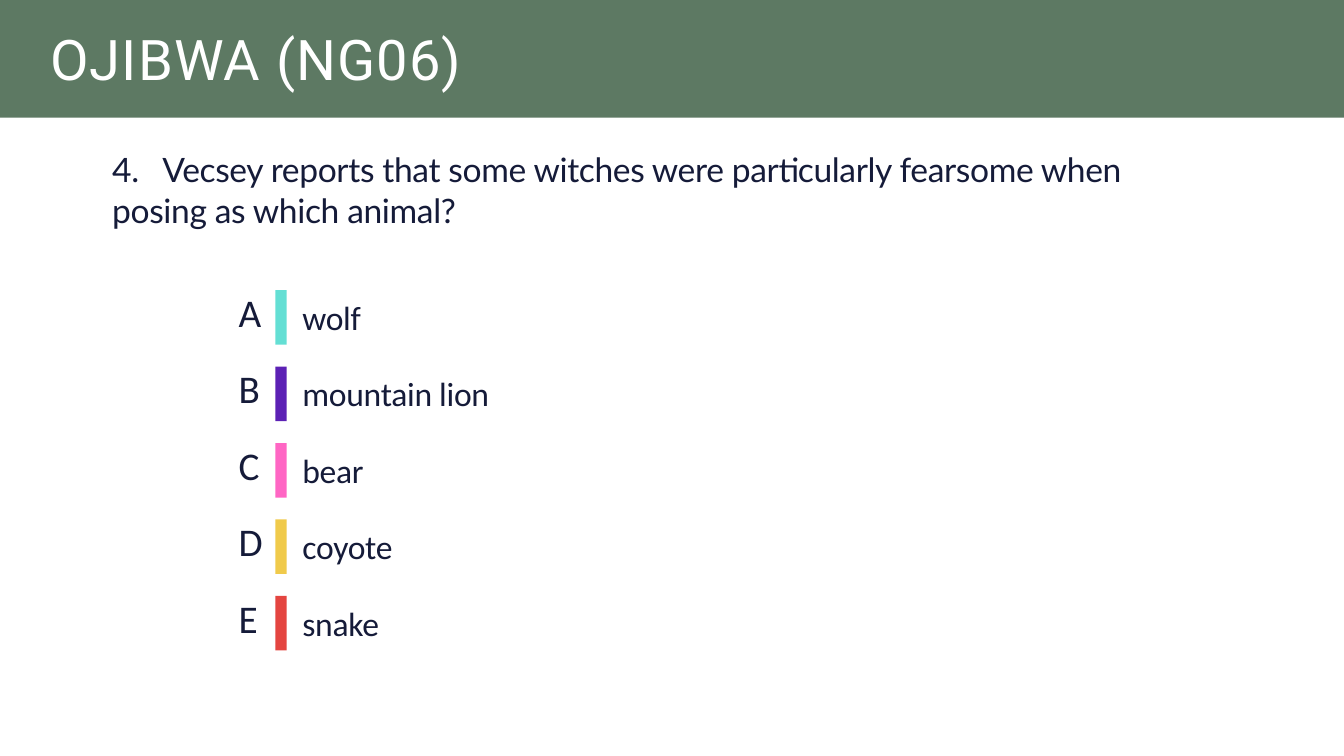
import pptx
import pptx.dml.color
import pptx.enum.shapes
import pptx.enum.text
import pptx.oxml
import pptx.oxml.ns
from pptx.util import Cm

RGBColor = pptx.dml.color.RGBColor
WHITE = RGBColor(0xFF, 0xFF, 0xFF)
GREEN = RGBColor(0x5D, 0x79, 0x63)
NAVY = RGBColor(0x15, 0x1B, 0x39)
TEAL = RGBColor(0x64, 0xDF, 0xD4)
PURPLE = RGBColor(0x5C, 0x21, 0xB5)
PINK = RGBColor(0xFF, 0x66, 0xC4)
YELLOW = RGBColor(0xF0, 0xCA, 0x4B)
RED = RGBColor(0xE4, 0x45, 0x40)

ANSWERS = [
    ("A", "wolf", TEAL, 25.25),
    ("B", "mountain lion", PURPLE, 30.07),
    ("C", "bear", PINK, 27),
    ("D", "coyote", YELLOW, 25.25),
    ("E", "snake", RED, 25.25),
]
FIRST_ROW = 10.97
ROW_PITCH = 2.89


def add_text(shapes, text, box, font, size, color, tracking):
    sp = shapes.add_textbox(*map(Cm, box))
    tf = sp.text_frame
    tf.word_wrap = True
    tf.auto_size = pptx.enum.text.MSO_AUTO_SIZE.SHAPE_TO_FIT_TEXT
    tf.margin_left = tf.margin_top = tf.margin_right = tf.margin_bottom = 0
    p = tf.paragraphs[0]
    p.line_spacing = pptx.util.Pt(size * 1.2)
    p.font.name = font
    p.font.size = pptx.util.Pt(size)
    p.font.color.rgb = color
    r = p.add_run()
    r.text = text
    r._r.get_or_add_rPr().set("spc", str(tracking))
    return p


def add_tab_stop(p, position):
    tabs = pptx.oxml.parse_xml(
        f'<a:tabLst {pptx.oxml.ns.nsdecls("a")}>'
        f'<a:tab pos="{position}" algn="l"/></a:tabLst>'
    )
    p._p.pPr.find(pptx.oxml.ns.qn("a:defRPr")).addprevious(tabs)


def add_bar(shapes, box, color):
    sp = shapes.add_shape(pptx.enum.shapes.MSO_SHAPE.RECTANGLE, *map(Cm, box))
    sp.shadow.inherit = False
    sp.fill.solid()
    sp.fill.fore_color.rgb = color
    sp.line.fill.background()


def add_answer(slide, top, letter, answer, color, width):
    shapes = slide.shapes.add_group_shape().shapes
    add_text(shapes, answer, (11.43, top + 0.25, width, 1.55), "Calibri", 36, NAVY, -30)
    add_bar(shapes, (10.41, top, 0.43, 2.06), color)
    add_text(shapes, letter, (9.02, top - 0.07, 10.29, 1.8), "Calibri", 42, NAVY, -40)


def main():
    prs = pptx.Presentation()
    prs.slide_width = Cm(50.8)
    prs.slide_height = Cm(28.58)
    slide = prs.slides.add_slide(prs.slide_layouts[6])
    slide.background.fill.solid()
    slide.background.fill.fore_color.rgb = WHITE

    question = add_text(
        slide.shapes,
        "4.\tVecsey reports that some witches were particularly fearsome "
        "when posing as which animal?",
        (4.24, 5.64, 41, 3.07), "Lato", 36, NAVY, -40,
    )
    add_tab_stop(question, Cm(1.9))
    add_bar(slide.shapes, (0, 0, 50.8, 4.45), GREEN)
    add_text(slide.shapes, "OJIBWA (NG06)", (1.9, 0.94, 18.62, 2.57),
             "Roboto", 60, WHITE, 120)
    for i, answer in enumerate(ANSWERS):
        add_answer(slide, FIRST_ROW + i * ROW_PITCH, *answer)

    prs.save("out.pptx")


if __name__ == "__main__":
    main()
